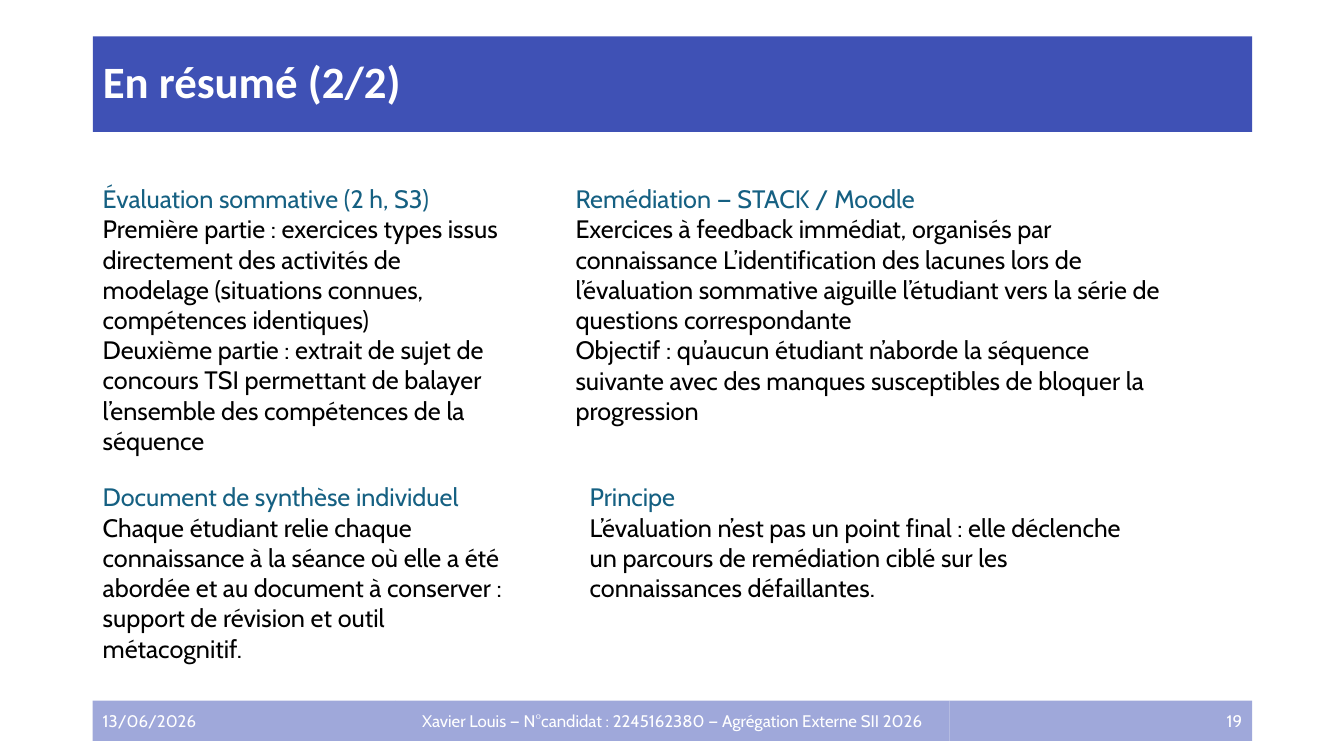
from dataclasses import dataclass

import pptx
import pptx.dml.color
import pptx.enum.shapes
import pptx.enum.text
import pptx.presentation
import pptx.slide
import pptx.text.text
import pptx.util

Inches = pptx.util.Inches
Align = pptx.enum.text.PP_ALIGN
Anchor = pptx.enum.text.MSO_ANCHOR


@dataclass(frozen=True)
class Theme:
    title_fill: str = "3F51B5"
    footer_fill: str = "9FA8DA"
    light_text: str = "FFFFFF"
    heading: str = "156082"
    body: str = "000000"
    title_font: str = "Calibri"
    text_font: str = "Cabin"
    title_size: int = 32
    body_size: int = 18
    footer_size: int = 12


@dataclass(frozen=True)
class FooterCell:
    text: str
    width: float
    align: Align


@dataclass(frozen=True)
class Section:
    left: float
    top: float
    width: float
    height: float
    heading: str
    paragraphs: tuple[str, ...]


THEME = Theme()
MARGIN = 0.92
CONTENT_WIDTH = 11.5
FOOTER_TOP, FOOTER_HEIGHT = 6.95, 0.4
UPPER_ROW, LOWER_ROW = 1.77, 4.73

FOOTER = (
    FooterCell("13/06/2026", 3, Align.LEFT),
    FooterCell(
        "Xavier Louis — N°candidat : 2245162380 — Agrégation Externe SII 2026",
        5.5, Align.CENTER),
    FooterCell("19", 3, Align.RIGHT),
)

SECTIONS = (
    Section(MARGIN, UPPER_ROW, 4.12, 2.83, "Évaluation sommative (2 h, S3)", (
        "Première partie : exercices types issus directement des activités de "
        "modelage (situations connues, compétences identiques)",
        "Deuxième partie : extrait de sujet de concours TSI permettant de "
        "balayer l’ensemble des compétences de la séquence",
    )),
    Section(MARGIN, LOWER_ROW, 4.31, 1.92, "Document de synthèse individuel", (
        "Chaque étudiant relie chaque connaissance à la séance où elle a été "
        "abordée et au document à conserver : support de révision et outil "
        "métacognitif.",
    )),
    Section(5.61, UPPER_ROW, 6.08, 2.52, "Remédiation — STACK / Moodle", (
        "Exercices à feedback immédiat, organisés par connaissance "
        "L’identification des lacunes lors de l’évaluation sommative aiguille "
        "l’étudiant vers la série de questions correspondante",
        "Objectif : qu’aucun étudiant n’aborde la séquence suivante avec des "
        "manques susceptibles de bloquer la progression",
    )),
    Section(5.75, LOWER_ROW, 5.69, 1.31, "Principe", (
        "L’évaluation n’est pas un point final : elle déclenche un parcours de "
        "remédiation ciblé sur les connaissances défaillantes.",
    )),
)


def rgb(value: str) -> pptx.dml.color.RGBColor:
    return pptx.dml.color.RGBColor.from_string(value)


def write(para: pptx.text.text._Paragraph, text: str, size: int, color: str,
          font: str = THEME.text_font, bold: bool = False) -> None:
    para.text = text
    for span in para.runs:
        span.font.name = font
        span.font.size = pptx.util.Pt(size)
        span.font.bold = bold
        span.font.color.rgb = rgb(color)


def add_title(page: pptx.slide.Slide, text: str) -> None:
    title = page.shapes.title
    title.left, title.top = Inches(MARGIN), Inches(0.36)
    title.width, title.height = Inches(CONTENT_WIDTH), Inches(0.95)
    title.fill.solid()
    title.fill.fore_color.rgb = rgb(THEME.title_fill)
    title.text_frame.vertical_anchor = Anchor.MIDDLE
    para = title.text_frame.paragraphs[0]
    para.alignment = Align.LEFT
    para.line_spacing = 0.9
    write(para, text, THEME.title_size, THEME.light_text, THEME.title_font, True)


def add_footer(page: pptx.slide.Slide, cells: tuple[FooterCell, ...]) -> None:
    left = MARGIN
    for cell in cells:
        box = page.shapes.add_shape(
            pptx.enum.shapes.MSO_SHAPE.RECTANGLE, Inches(left),
            Inches(FOOTER_TOP), Inches(cell.width), Inches(FOOTER_HEIGHT))
        box.shadow.inherit = False
        box.fill.solid()
        box.fill.fore_color.rgb = rgb(THEME.footer_fill)
        box.line.fill.background()
        box.text_frame.vertical_anchor = Anchor.MIDDLE
        para = box.text_frame.paragraphs[0]
        para.alignment = cell.align
        write(para, cell.text, THEME.footer_size, THEME.light_text)
        left += cell.width


def add_section(page: pptx.slide.Slide, section: Section) -> None:
    box = page.shapes.add_textbox(
        Inches(section.left), Inches(section.top),
        Inches(section.width), Inches(section.height))
    frame = box.text_frame
    frame.word_wrap = True
    frame.auto_size = pptx.enum.text.MSO_AUTO_SIZE.SHAPE_TO_FIT_TEXT
    write(frame.paragraphs[0], section.heading, THEME.body_size, THEME.heading)
    for text in section.paragraphs:
        write(frame.add_paragraph(), text, THEME.body_size, THEME.body)


def main() -> None:
    deck = pptx.Presentation()
    deck.slide_width, deck.slide_height = Inches(13.33), Inches(7.5)
    page = deck.slides.add_slide(deck.slide_layouts.get_by_name("Title Only"))

    # Title band and footer strip
    add_title(page, "En résumé (2/2)")
    add_footer(page, FOOTER)

    # Text sections
    for section in SECTIONS:
        add_section(page, section)

    deck.save("out.pptx")


if __name__ == "__main__":
    main()
